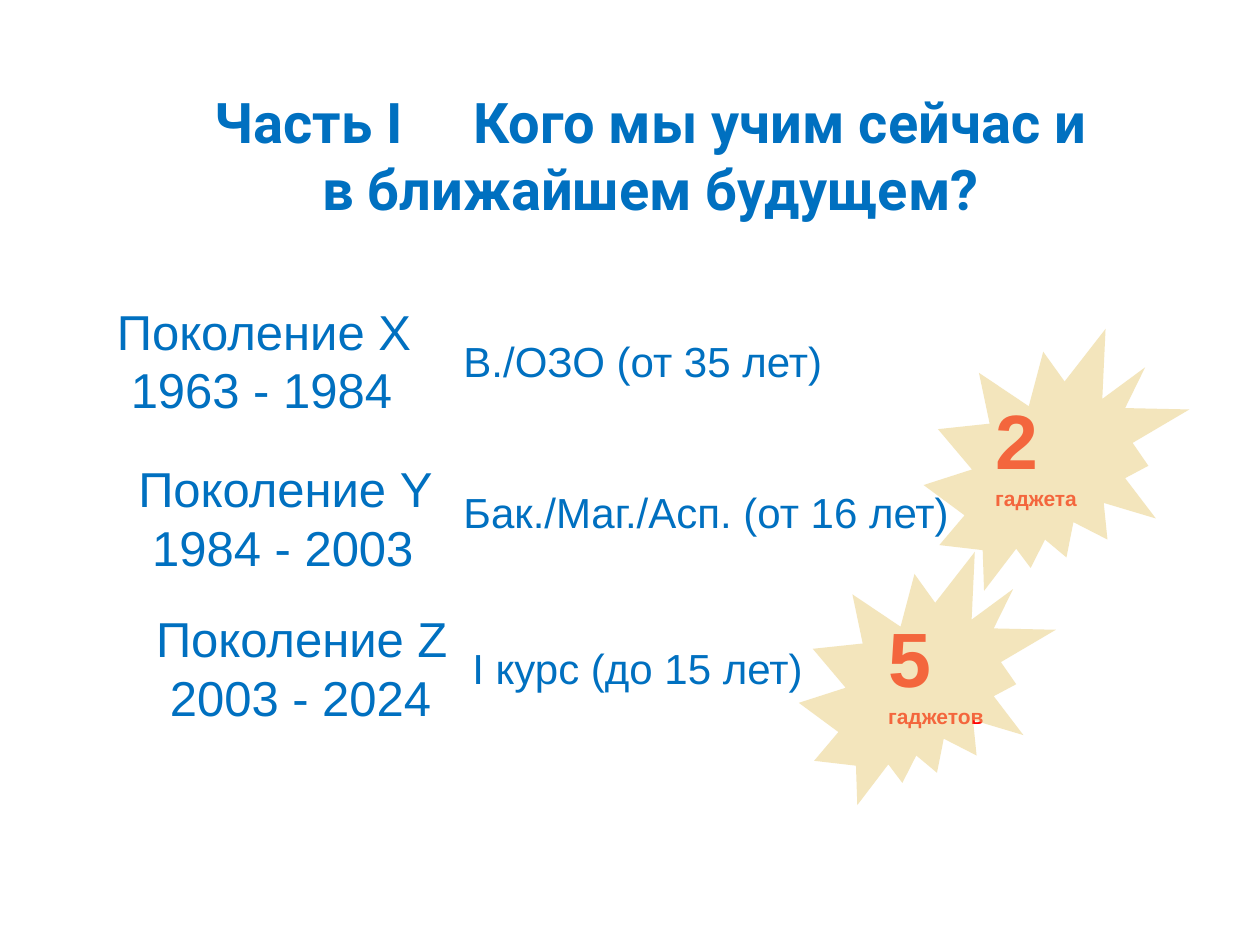
"""Build the slide on the generations of students and their gadgets."""
import pptx
import pptx.dml.color
import pptx.enum.shapes
import pptx.enum.text
import pptx.oxml.ns
import pptx.util
from lxml import etree

Inches = pptx.util.Inches
COLORS = {"blue": "0070C0", "red": "FF0000", "sand": "E9CC7A"}
FORMATS = {
    "title": {"name": "Roboto", "size": 32, "bold": True, "color": "blue"},
    "generation": {"name": "Arial", "size": 28, "color": "blue"},
    "audience": {"name": "Arial", "size": 24, "color": "blue"},
    "count": {"name": "Arial", "size": 44, "bold": True, "color": "red"},
    "gadget": {"name": "Arial", "size": 12, "bold": True, "color": "red"},
}
GENERATIONS = [
    ("Поколение X", "1963 - 1984", (0.83, 2.34, 2.67, 1.04)),
    ("Поколение Y", "1984 - 2003", (1, 3.59, 2.8, 1.04)),
    ("Поколение Z", "2003 - 2024", (1.14, 4.78, 2.8, 1.04)),
]
AUDIENCES = [
    ("I курс (до 15 лет)", (3.65, 5.05, 2.95, 0.5)),
    ("Бак./Маг./Асп. (от 16 лет)", (3.58, 3.81, 4.09, 0.5)),
    ("В./OЗО (от 35 лет)", (3.58, 2.61, 3.11, 0.5)),
]
GADGETS = [
    ("2 ", "гаджета", (7.8, 3.07, 1.31, 1.04)),
    ("5 ", "гаджетов", (6.95, 4.8, 0.99, 1.04)),
]
BURSTS = [(7.33, 2.61, 2.11, 2.08), (6.34, 4.38, 2.04, 2.01)]


class SlideBuilder:
    """Hold the style and the current slide."""

    def __init__(self, slide, colors, formats):
        self.slide, self.colors, self.formats = slide, colors, formats

    def rgb(self, color):
        return pptx.dml.color.RGBColor.from_string(self.colors[color])

    def run(self, paragraph, wording, style):
        run = paragraph.add_run()
        run.text = wording
        values = dict(self.formats[style])
        run.font.color.rgb = self.rgb(values.pop("color"))
        values["size"] = pptx.util.Pt(values["size"])
        for attribute, value in values.items():
            setattr(run.font, attribute, value)
        return run

    def title(self, part, question, box):
        heading = self.slide.shapes.title
        for attribute, length in zip(("left", "top", "width", "height"), box):
            setattr(heading, attribute, Inches(length))
        frame = heading.text_frame
        settings = {"word_wrap": True,
                    "auto_size": pptx.enum.text.MSO_AUTO_SIZE.NONE,
                    "vertical_anchor": pptx.enum.text.MSO_ANCHOR.MIDDLE}
        for attribute, value in settings.items():
            setattr(frame, attribute, value)
        paragraph = frame.paragraphs[0]
        paragraph.alignment = pptx.enum.text.PP_ALIGN.CENTER
        self.run(paragraph, part, "title")
        gap = self.run(paragraph, " ", "title")
        gap.font._element.set("spc", "3200")
        self.run(paragraph, question, "title")

    def text(self, lines, box, indent=0):
        frame = self.slide.shapes.add_textbox(*map(Inches, box)).text_frame
        frame.word_wrap = True
        for number, line in enumerate(lines):
            paragraph = frame.add_paragraph() if number else frame.paragraphs[0]
            if number and indent:
                paragraph._p.get_or_add_pPr().set("marL", str(Inches(indent)))
            for wording, style in line:
                self.run(paragraph, wording, style)

    def burst(self, box, opacity):
        seal = self.slide.shapes.add_shape(
            pptx.enum.shapes.MSO_SHAPE.EXPLOSION2, *map(Inches, box))
        seal.shadow.inherit = False
        seal.line.fill.background()
        seal.fill.solid()
        seal.fill.fore_color.rgb = self.rgb("sand")
        qn = pptx.oxml.ns.qn
        fill_color = seal._element.spPr.find(f"{qn('a:solidFill')}/{qn('a:srgbClr')}")
        etree.SubElement(fill_color, qn("a:alpha")).set("val", str(opacity * 1000))


def main():
    deck = pptx.Presentation()
    deck.slide_width, deck.slide_height = Inches(10), Inches(7.5)
    slide = deck.slides.add_slide(deck.slide_layouts[5])
    builder = SlideBuilder(slide, COLORS, FORMATS)
    builder.title("Часть I", "Кого мы учим сейчас и в ближайшем будущем?",
                  (1.46, 0.76, 7.41, 0.94))
    for generation, years, box in GENERATIONS:
        builder.text([[(generation, "generation")], [(years, "generation")]],
                     box, indent=0.11)
    for audience, box in AUDIENCES:
        builder.text([[(audience, "audience")]], box)
    for count, gadget, box in GADGETS:
        builder.text([[(count, "count"), (gadget, "gadget")]], box)
    for box in BURSTS:
        builder.burst(box, 50)
    deck.save("out.pptx")


if __name__ == "__main__":
    main()
